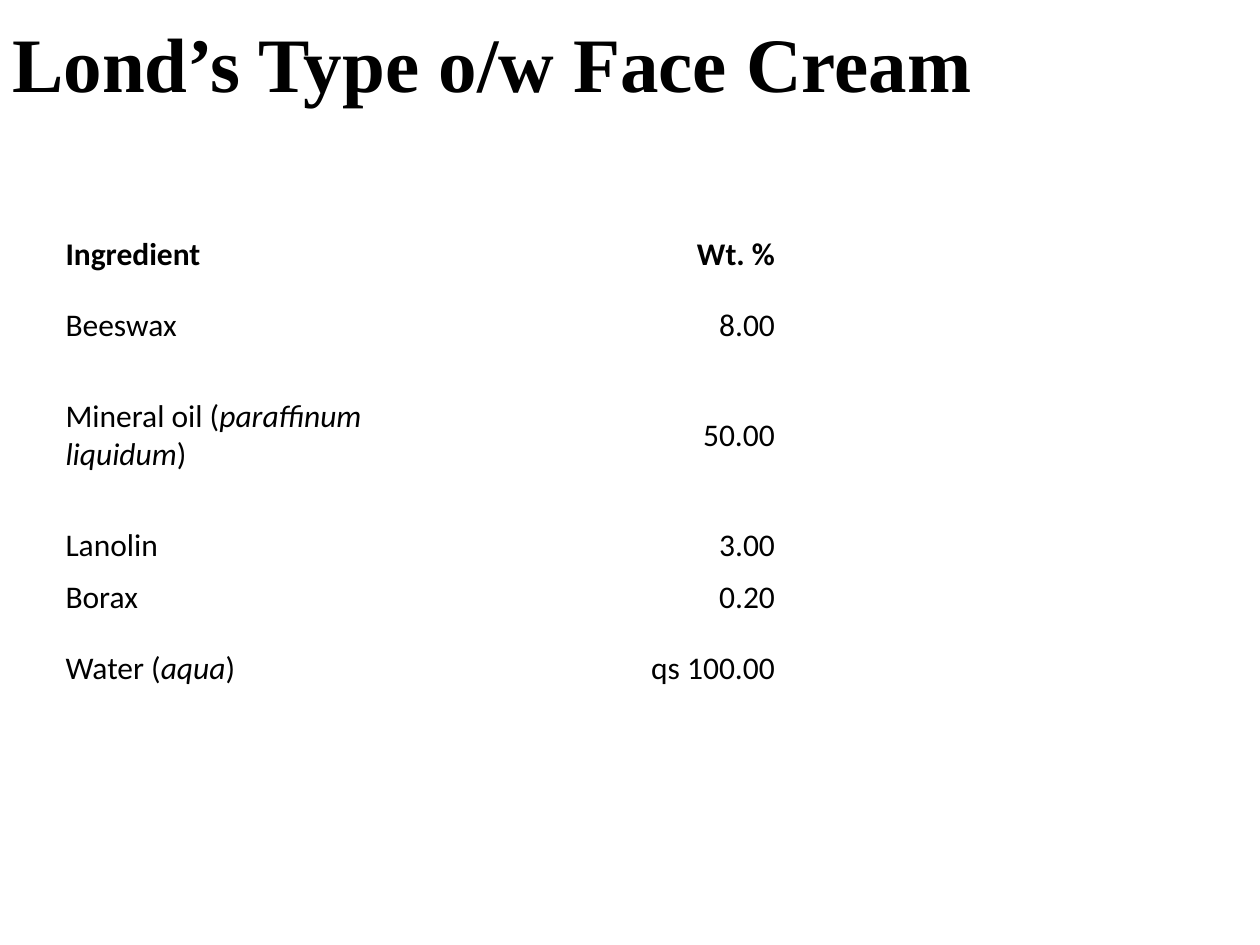
from pptx import Presentation
from pptx import util as u
from pptx.dml import color
from pptx.enum import text

WIDTH, HEIGHT = u.Inches(10), u.Inches(7.5)
BLACK, WHITE = "000000", "FFFFFF"

# Each entry: row height in inches, ingredient as (words, italic) runs, weight
HEADER = (0.72, [("Ingredient", False)], "Wt. %")
INGREDIENTS = [
    (0.41, [("Beeswax", False)], "8.00"),
    (1.34, [("Mineral oil (", False), ("paraffinum liquidum", True), (")", False)], "50.00"),
    (0.41, [("Lanolin", False)], "3.00"),
    (0.41, [("Borax", False)], "0.20"),
    (0.72, [("Water (", False), ("aqua", True), (")", False)], "qs 100.00"),
]
SPACER_HEIGHT = 0.41


def rgb(value):
    return color.RGBColor.from_string(value)


def share(left, top, width, height):
    """Turn shares of the slide into a box of lengths."""
    return [round(part * side) for part, side in
            zip((left, top, width, height), (WIDTH, HEIGHT) * 2)]


def add_run(paragraph, words, size, font, bold=False, italic=False):
    run = paragraph.add_run()
    run.text = words
    run.font.size, run.font.name = u.Pt(size), font
    run.font.bold, run.font.italic = bold, italic
    run.font.color.rgb = rgb(BLACK)


def add_title(slide, box, words):
    frame = slide.shapes.add_textbox(*box).text_frame
    frame.word_wrap = True
    frame.margin_top = u.Inches(0.12)
    frame.vertical_anchor = text.MSO_ANCHOR.TOP
    add_run(frame.paragraphs[0], words, 44, "Times New Roman", bold=True)


def fill_cell(cell, runs, align, bold):
    cell.vertical_anchor = text.MSO_ANCHOR.MIDDLE
    paragraph = cell.text_frame.paragraphs[0]
    paragraph.alignment = align
    for words, italic in runs:
        add_run(paragraph, words, 18, "Calibri", bold, italic)


def add_formula(slide, box):
    """Place the ingredient table under a merged empty row."""
    entries = [HEADER, *INGREDIENTS]
    table = slide.shapes.add_table(len(entries) + 1, 2, *box).table
    table.first_row = table.horz_banding = False
    for cell in table.iter_cells():
        cell.fill.solid()
        cell.fill.fore_color.rgb = rgb(WHITE)
    table.cell(0, 0).merge(table.cell(0, 1))
    table.rows[0].height = u.Inches(SPACER_HEIGHT)
    for row, (height, ingredient, weight) in enumerate(entries, start=1):
        table.rows[row].height = u.Inches(height)
        bold = row == 1
        fill_cell(table.cell(row, 0), ingredient, text.PP_ALIGN.LEFT, bold)
        fill_cell(table.cell(row, 1), [(weight, False)], text.PP_ALIGN.RIGHT, bold)


def main():
    deck = Presentation()
    deck.slide_width, deck.slide_height = WIDTH, HEIGHT
    slide = deck.slides.add_slide(deck.slide_layouts[6])
    add_formula(slide, share(0.042, 1 / 6, 0.583, 0.59))
    add_title(slide, share(0, 0, 0.883, 0.31), "Lond’s Type o/w Face Cream")
    deck.save("out.pptx")


if __name__ == "__main__":
    main()
